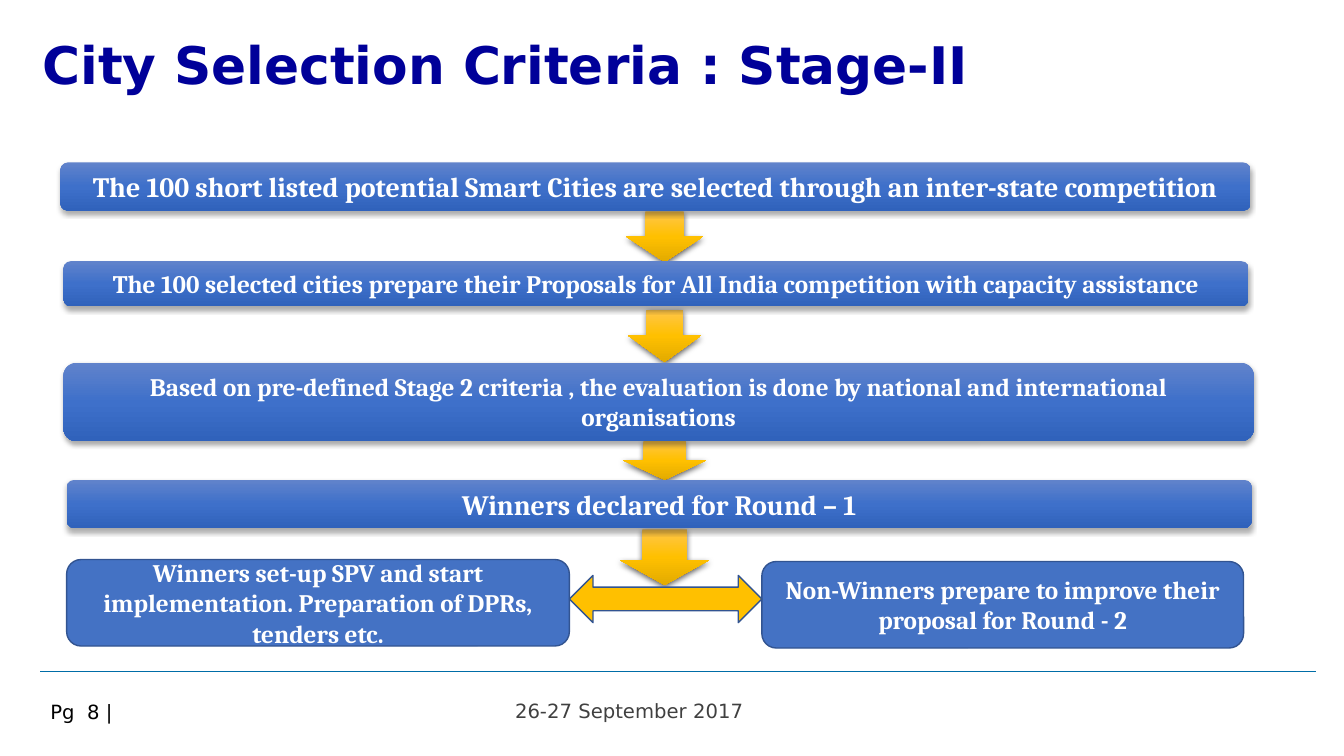
import copy

import lxml.etree
import pptx
import pptx.dml.color
import pptx.enum.shapes
import pptx.enum.text
import pptx.oxml
import pptx.oxml.ns
import pptx.util

Cm, Pt = pptx.util.Cm, pptx.util.Pt
RGBColor = pptx.dml.color.RGBColor
Shape = pptx.enum.shapes.MSO_SHAPE
Align = pptx.enum.text.PP_ALIGN
Anchor = pptx.enum.text.MSO_ANCHOR
AutoSize = pptx.enum.text.MSO_AUTO_SIZE
qn = pptx.oxml.ns.qn

NAVY = RGBColor(0x00, 0x00, 0x99)
BLACK = RGBColor(0x00, 0x00, 0x00)
GREY = RGBColor(0x40, 0x40, 0x40)
WHITE = RGBColor(0xFF, 0xFF, 0xFF)
RULE_BLUE = RGBColor(0x00, 0x6D, 0xA7)
BLUE = RGBColor(0x44, 0x72, 0xC4)
OUTLINE = RGBColor(0x32, 0x54, 0x91)
GOLD = RGBColor(0xFF, 0xC0, 0x00)
BLUE_SHADES = (RGBColor(0x61, 0x83, 0xCB), RGBColor(0x3E, 0x70, 0xCA), RGBColor(0x30, 0x62, 0xBB))
GOLD_SHADES = (RGBColor(0xFF, 0xC6, 0x4B), GOLD, RGBColor(0xE3, 0xAB, 0x00))

# Text, (left, top, width, height) in cm, line spacing, insets in cm, font
LABELS = [
    ("26-27 September 2017", (12.73, 17.48, 9.8, 0.86), 1.0, (0.25, 0.13),
     {"size": Pt(14), "name": "DejaVu Sans"}, GREY),
    ("Pg  8 |", (1.02, 17.55, 7.01, 0.99), 0.93, (0.25, 0.13),
     {"size": Pt(14), "name": "DejaVu Sans"}, BLACK),
    ("City Selection Criteria : Stage-II", (1.07, 0.91, 25.43, 1.8), 0.94, (0, 0.05),
     {"size": Pt(37), "name": "DejaVu Sans", "bold": True}, NAVY),
]
STEPS = [
    ("The 100 short listed potential Smart Cities are selected through an inter-state competition",
     (1.52, 4.09, 30, 1.22), 20),
    ("The 100 selected cities prepare their Proposals for All India competition with capacity assistance",
     (1.6, 6.58, 29.87, 1.14), 18),
    ("Based on pre-defined Stage 2 criteria , the evaluation is done by national and international organisations",
     (1.6, 9.14, 30, 1.98), 18),
    ("Winners declared for Round – 1", (1.68, 12.09, 29.87, 1.22), 20),
]
OUTCOMES = [
    ("Winners set-up SPV and start implementation. Preparation of DPRs, tenders etc.",
     (1.68, 14.1, 12.67, 2.18)),
    ("Non-Winners prepare to improve their proposal for Round - 2", (19.2, 14.15, 12.14, 2.18)),
]
# Top, width, height, head length as a share of the width
ARROW_CENTRE = 16.75
DOWN_ARROWS = [(5.33, 1.93, 1.27, 0.5), (7.8, 1.83, 1.32, 0.5),
               (11.1, 2.11, 0.99, 0.5), (13.34, 2.24, 1.4, 0.445)]
# Opacity in percent, blur and distance in points
STEP_SHADOW = (32, 3.5, 2.2)
ARROW_SHADOW = (63, 4.5, 1.5)


def write(frame, text, font, color, align=Align.LEFT):
    frame.word_wrap = True
    paragraph = frame.paragraphs[0]
    paragraph.alignment = align
    run = paragraph.add_run()
    run.text = text
    for name, value in font.items():
        setattr(run.font, name, value)
    run.font.color.rgb = color
    return paragraph


def add_box(slide, kind, box):
    shape = slide.shapes.add_shape(kind, *map(Cm, box))
    shape.shadow.inherit = False
    return shape


def add_raised(slide, kind, box, shades, shadow):
    """Add an unlined shape with a three-stop downward gradient and a shadow below."""
    shape = add_box(slide, kind, box)
    shape.line.fill.background()
    shape.fill.gradient()
    shape.fill.gradient_angle = 270
    properties = shape._element.spPr
    stops = properties.find(".//" + qn("a:gsLst"))
    stops.append(copy.deepcopy(stops[-1]))
    for stop, position, shade in zip(shape.fill.gradient_stops, (0, 0.5, 1), shades):
        stop.position = position
        stop.color.rgb = shade
    opacity, blur, distance = shadow
    properties.find(qn("a:effectLst")).append(pptx.oxml.parse_xml(
        f'<a:outerShdw {pptx.oxml.ns.nsdecls("a")} blurRad="{Pt(blur)}" dist="{Pt(distance)}" '
        f'dir="5400000" algn="ctr" rotWithShape="0"><a:srgbClr val="000000">'
        f'<a:alpha val="{opacity * 1000}"/></a:srgbClr></a:outerShdw>'))
    return shape


def add_flat(slide, kind, box, color):
    shape = add_box(slide, kind, box)
    shape.fill.solid()
    shape.fill.fore_color.rgb = color
    shape.line.color.rgb = OUTLINE
    shape.line.width = Pt(1)
    return shape


def add_footer_rule(slide):
    rule = slide.shapes.add_connector(pptx.enum.shapes.MSO_CONNECTOR.STRAIGHT,
                                      Cm(1.02), Cm(16.92), Cm(33.17), Cm(16.92))
    rule.line.color.rgb = RULE_BLUE
    rule.line.width = Pt(0.75)
    lxml.etree.SubElement(rule._element.spPr, qn("a:effectLst"))


def main():
    presentation = pptx.Presentation()
    presentation.slide_width, presentation.slide_height = Cm(33.87), Cm(19.05)
    slide = presentation.slides.add_slide(presentation.slide_layouts[6])
    add_footer_rule(slide)

    for text, box, spacing, (side, edge), font, color in LABELS:
        frame = slide.shapes.add_textbox(*map(Cm, box)).text_frame
        frame.margin_left = frame.margin_right = Cm(side)
        frame.margin_top = frame.margin_bottom = Cm(edge)
        write(frame, text, font, color).line_spacing = spacing

    for top, width, height, head in DOWN_ARROWS:
        box = (ARROW_CENTRE - width / 2, top, width, height)
        arrow = add_raised(slide, Shape.DOWN_ARROW, box, GOLD_SHADES, ARROW_SHADOW)
        # The head length is the first or second adjustment by the shape's own order
        arrow.adjustments[0], arrow.adjustments[1] = 0.5, head

    for text, box, size in STEPS:
        step = add_raised(slide, Shape.ROUNDED_RECTANGLE, box, BLUE_SHADES, STEP_SHADOW)
        step.text_frame.auto_size = AutoSize.SHAPE_TO_FIT_TEXT
        step.text_frame.vertical_anchor = Anchor.TOP
        write(step.text_frame, text, {"size": Pt(size), "name": "Cambria", "bold": True},
              WHITE, Align.CENTER)

    for text, box in OUTCOMES:
        outcome = add_flat(slide, Shape.ROUNDED_RECTANGLE, box, BLUE)
        outcome.text_frame.vertical_anchor = Anchor.MIDDLE
        write(outcome.text_frame, text, {"size": Pt(18), "name": "Cambria", "bold": True},
              WHITE, Align.CENTER)

    winners, others = (box for text, box in OUTCOMES)
    gap_left = winners[0] + winners[2]
    add_flat(slide, Shape.LEFT_RIGHT_ARROW, (gap_left, 14.5, others[0] - gap_left, 1.19), GOLD)

    presentation.save("out.pptx")


if __name__ == "__main__":
    main()
